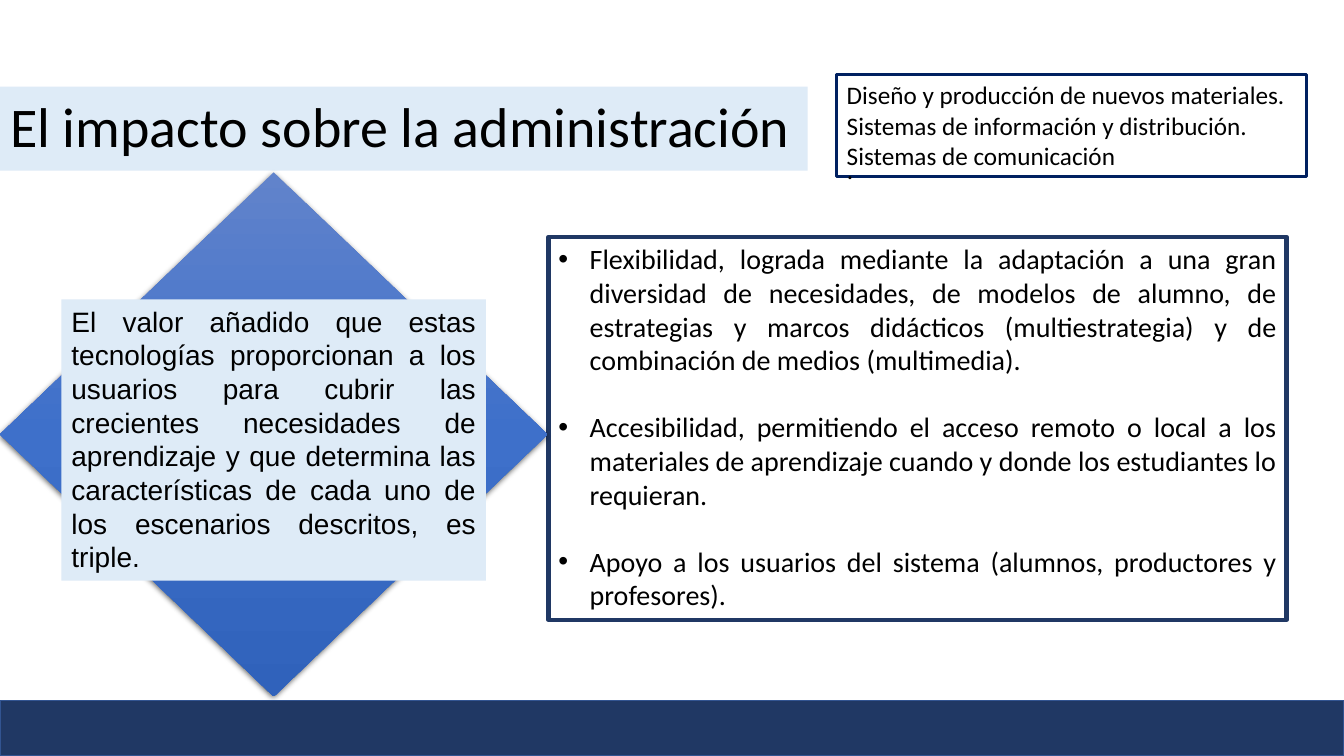
"""Build the slide on the impact of technologies on administration."""
import copy
import dataclasses
import typing

import lxml.etree
import pptx
import pptx.dml.color
import pptx.enum.shapes
import pptx.enum.text
import pptx.oxml
import pptx.oxml.ns
import pptx.shapes.autoshape
import pptx.slide
import pptx.util

RGBColor = pptx.dml.color.RGBColor
Inches = pptx.util.Inches
Pt = pptx.util.Pt
Align = pptx.enum.text.PP_ALIGN
Preset = pptx.enum.shapes.MSO_SHAPE
qn = pptx.oxml.ns.qn

BLACK = RGBColor(0x00, 0x00, 0x00)
WHITE = RGBColor(0xFF, 0xFF, 0xFF)
PALE_BLUE = RGBColor(0xDE, 0xEB, 0xF7)
NAVY = RGBColor(0x20, 0x38, 0x64)
DARK_NAVY = RGBColor(0x00, 0x20, 0x60)
BAND_EDGE = RGBColor(0x32, 0x54, 0x91)
DIAMOND_TOP = RGBColor(0x61, 0x83, 0xCB)
DIAMOND_MIDDLE = RGBColor(0x3E, 0x70, 0xCA)
DIAMOND_BOTTOM = RGBColor(0x30, 0x62, 0xBB)

SHADOW = (
    '<a:outerShdw xmlns:a="http://schemas.openxmlformats.org/drawingml/2006/main" '
    'blurRad="57150" dist="19050" dir="5400000" algn="ctr" rotWithShape="0">'
    '<a:srgbClr val="000000"><a:alpha val="63000"/></a:srgbClr></a:outerShdw>'
)


@dataclasses.dataclass(frozen=True)
class Panel:
    """A rectangle with optional fill, outline and text."""

    left: float
    top: float
    width: float
    height: float
    fill: typing.Optional[RGBColor] = None
    line: typing.Optional[RGBColor] = None
    line_width: float = 0
    lines: tuple[str, ...] = ()
    size: int = 18
    font: str = "Calibri"
    align: Align = Align.LEFT
    wrap: bool = False
    bullets: bool = False
    gap: float = 0


TITLE = Panel(0, 0.86, 8.01, 0.77, PALE_BLUE, size=40,
              lines=("El impacto sobre la administración",))
SYSTEMS = Panel(
    8.3, 0.74, 4.66, 1.01, WHITE, DARK_NAVY, 2.25,
    lines=(
        "Diseño y producción de nuevos materiales.",
        "Sistemas de información y distribución.",
        "Sistemas de comunicación",
    ),
)
FULL_STOP = Panel(8.3, 1.48, 0.32, 0.4, lines=(".",))
BENEFITS = Panel(
    5.44, 2.35, 7.32, 3.8, WHITE, NAVY, 3,
    lines=(
        "Flexibilidad, lograda mediante la adaptación a una gran diversidad de "
        "necesidades, de modelos de alumno, de estrategias y marcos didácticos "
        "(multiestrategia) y de combinación de medios (multimedia).",
        "Accesibilidad, permitiendo el acceso remoto o local a los materiales de "
        "aprendizaje cuando y donde los estudiantes lo requieran.",
        "Apoyo a los usuarios del sistema (alumnos, productores y profesores).",
    ),
    size=20, align=Align.JUSTIFY, wrap=True, bullets=True, gap=24,
)
ADDED_VALUE = Panel(
    0.61, 2.97, 4.21, 2.79, PALE_BLUE,
    lines=(
        "El valor añadido que estas tecnologías proporcionan a los usuarios para "
        "cubrir las crecientes necesidades de aprendizaje y que determina las "
        "características de cada uno de los escenarios descritos, es triple.",
    ),
    size=20, font="Arial", align=Align.JUSTIFY, wrap=True,
)
BOTTOM_BAND = Panel(0, 6.95, 13.33, 0.55, NAVY, BAND_EDGE, 1)


def write_text(box: pptx.shapes.autoshape.Shape, panel: Panel) -> None:
    """Write and format the lines of a panel."""
    frame = box.text_frame
    frame.text = "\n".join(panel.lines)
    frame.word_wrap = panel.wrap
    frame.auto_size = pptx.enum.text.MSO_AUTO_SIZE.SHAPE_TO_FIT_TEXT
    frame.vertical_anchor = pptx.enum.text.MSO_ANCHOR.TOP
    for index, para in enumerate(frame.paragraphs):
        para.alignment = panel.align
        para.line_spacing = 1.0
        para.space_before = Pt(panel.gap if index else 0)
        para.font.size = Pt(panel.size)
        para.font.name = panel.font
        para.font.color.rgb = BLACK
        if panel.bullets:
            properties = para._p.get_or_add_pPr()
            properties.set("marL", str(Inches(0.31)))
            properties.set("indent", str(-Inches(0.31)))
            bullet_font = lxml.etree.Element(qn("a:buFont"), typeface="Arial")
            bullet = lxml.etree.Element(qn("a:buChar"), char="•")
            defaults = properties.find(qn("a:defRPr"))
            defaults.addprevious(bullet_font)
            defaults.addprevious(bullet)


def draw_panel(page: pptx.slide.Slide, panel: Panel) -> None:
    """Draw a panel as a rectangle."""
    box = page.shapes.add_shape(
        Preset.RECTANGLE, Inches(panel.left), Inches(panel.top),
        Inches(panel.width), Inches(panel.height))
    box.shadow.inherit = False
    if panel.fill is None:
        box.fill.background()
    else:
        box.fill.solid()
        box.fill.fore_color.rgb = panel.fill
    if panel.line is None:
        box.line.fill.background()
    else:
        box.line.color.rgb = panel.line
        box.line.width = Pt(panel.line_width)
    if panel.lines:
        write_text(box, panel)


def place_title(page: pptx.slide.Slide, panel: Panel) -> None:
    """Move and format the title placeholder."""
    title = page.shapes.title
    title.left, title.top = Inches(panel.left), Inches(panel.top)
    title.width, title.height = Inches(panel.width), Inches(panel.height)
    title.fill.solid()
    title.fill.fore_color.rgb = panel.fill
    write_text(title, panel)


def draw_diamond(page: pptx.slide.Slide) -> None:
    """Draw the shaded diamond with its shadow."""
    diamond = page.shapes.add_shape(
        Preset.FLOWCHART_DECISION, Inches(0), Inches(1.71), Inches(5.43), Inches(5.2))
    diamond.line.fill.background()
    diamond.fill.gradient()
    diamond.fill.gradient_angle = 270
    stops = diamond._element.spPr.find(qn("a:gradFill")).find(qn("a:gsLst"))
    stops.insert(1, copy.deepcopy(stops[0]))
    colours = (DIAMOND_TOP, DIAMOND_MIDDLE, DIAMOND_BOTTOM)
    for index, (stop, colour) in enumerate(zip(diamond.fill.gradient_stops, colours)):
        stop.position = index / 2
        stop.color.rgb = colour
    diamond.shadow.inherit = False
    effects = diamond._element.spPr.find(qn("a:effectLst"))
    effects.append(pptx.oxml.parse_xml(SHADOW))


def main() -> None:
    """Build and save the deck."""
    deck = pptx.Presentation()
    deck.slide_width, deck.slide_height = Inches(13.33), Inches(7.5)
    page = deck.slides.add_slide(deck.slide_layouts.get_by_name("Title Only"))
    place_title(page, TITLE)
    for panel in (SYSTEMS, FULL_STOP, BENEFITS):
        draw_panel(page, panel)
    draw_diamond(page)
    for panel in (ADDED_VALUE, BOTTOM_BAND):
        draw_panel(page, panel)
    deck.save("out.pptx")


if __name__ == "__main__":
    main()
